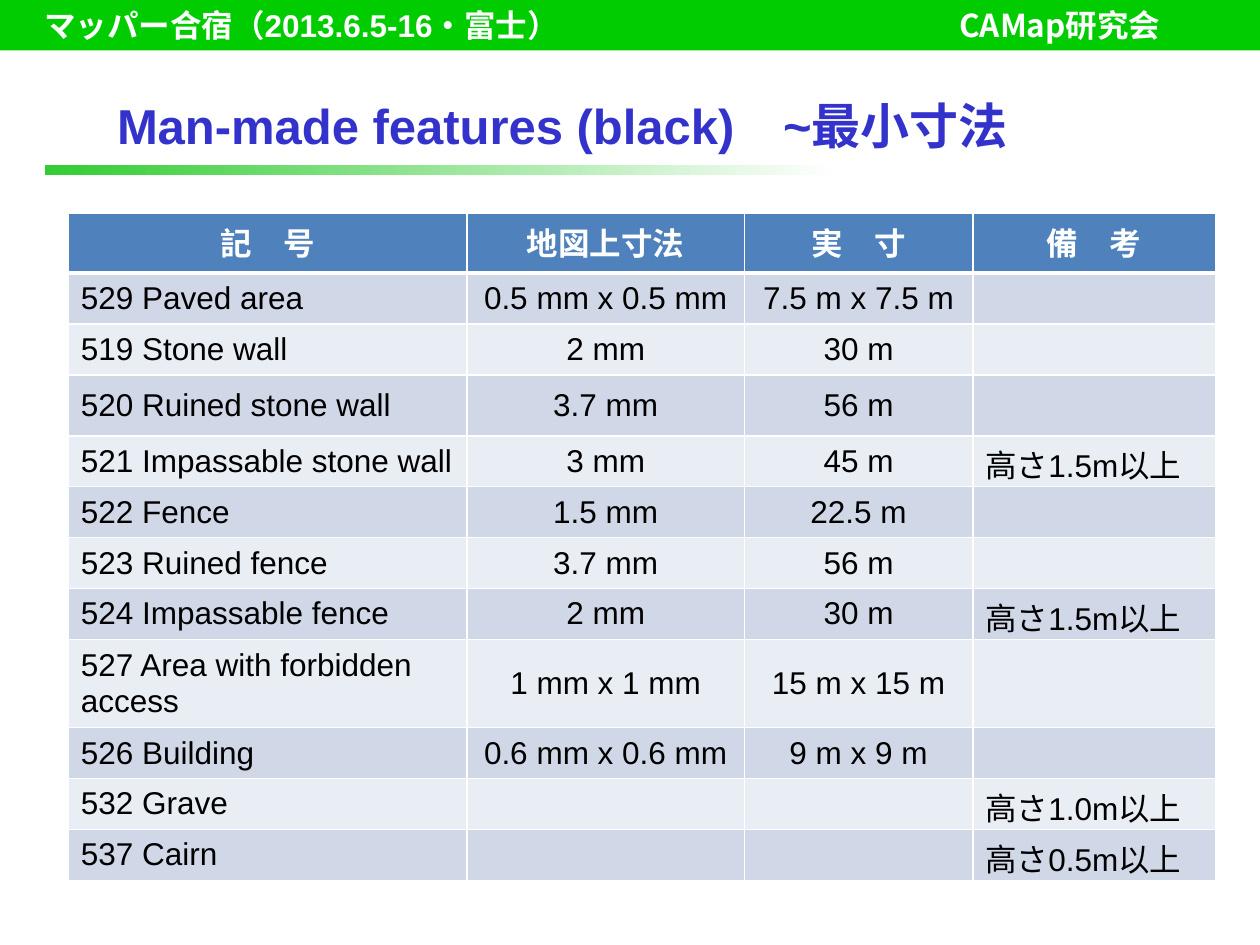
import lxml.etree
import pptx
import pptx.dml.color
import pptx.enum.shapes
import pptx.enum.text
import pptx.oxml.ns
import pptx.util

Pt = pptx.util.Pt
ALIGN = pptx.enum.text.PP_ALIGN
MIDDLE = pptx.enum.text.MSO_ANCHOR.MIDDLE
RECTANGLE = pptx.enum.shapes.MSO_SHAPE.RECTANGLE
CJK = "Noto Sans CJK JP"
qn = pptx.oxml.ns.qn


def color(value):
    return pptx.dml.color.RGBColor.from_string(value)


def add_span(para, text, shade, **formats):
    span = para.add_run()
    span.text = text
    for name, value in formats.items():
        setattr(span.font, name, value)
    span.font.color.rgb = color(shade)
    lxml.etree.SubElement(span.font._element, qn("a:ea"), typeface=CJK)


deck = pptx.Presentation()
deck.slide_width, deck.slide_height = Pt(720), Pt(540)
page = deck.slides.add_slide(deck.slide_layouts[6])

title_box = page.shapes.add_textbox(Pt(59.8), Pt(43.2), Pt(566.6), Pt(56.9))
title_frame = title_box.text_frame
title_frame.word_wrap = True
title_frame.vertical_anchor = MIDDLE
add_span(title_frame.paragraphs[0], "Man-made features (black)　~最小寸法", "3333CC",
         name="Arial", size=Pt(28), bold=True)

underline = page.shapes.add_shape(RECTANGLE, Pt(25.5), Pt(94.4), Pt(453.6), Pt(5.4))
underline.shadow.inherit = False
underline.line.fill.background()
underline.fill.gradient()
underline.fill.gradient_angle = 0
for stop, shade in zip(underline.fill.gradient_stops, ("33CC33", "FFFFFF")):
    stop.color.rgb = color(shade)

banner = page.shapes.add_shape(RECTANGLE, 0, 0, Pt(720), Pt(28.8))
banner.shadow.inherit = False
banner.line.fill.background()
banner.fill.solid()
banner.fill.fore_color.rgb = color("00CC00")
banner_format = {"margin_left": Pt(25.2), "margin_right": 0, "margin_top": 0,
                 "margin_bottom": 0, "vertical_anchor": MIDDLE, "word_wrap": True}
for name, value in banner_format.items():
    setattr(banner.text_frame, name, value)
banner_para = banner.text_frame.paragraphs[0]
banner_para.alignment = ALIGN.LEFT
tabs = lxml.etree.SubElement(banner_para._p.get_or_add_pPr(), qn("a:tabLst"))
lxml.etree.SubElement(tabs, qn("a:tab"), pos=str(Pt(523)), algn="l")
for text, font_name in (("マッパー合宿（", CJK), ("2013.6.5-16", "Arial"),
                        ("・富士）\tCAMap研究会", CJK)):
    add_span(banner_para, text, "FFFFFF", name=font_name, size=Pt(18), bold=True)

rows = [
    ("記　号", "地図上寸法", "実　寸", "備　考"),
    ("529 Paved area", "0.5 mm x 0.5 mm", "7.5 m x 7.5 m", ""),
    ("519 Stone wall", "2 mm", "30 m", ""),
    ("520 Ruined stone wall", "3.7 mm", "56 m", ""),
    ("521 Impassable stone wall", "3 mm", "45 m", "高さ1.5m以上"),
    ("522 Fence", "1.5 mm", "22.5 m", ""),
    ("523 Ruined fence", "3.7 mm", "56 m", ""),
    ("524 Impassable fence", "2 mm", "30 m", "高さ1.5m以上"),
    ("527 Area with forbidden access", "1 mm x 1 mm", "15 m x 15 m", ""),
    ("526 Building", "0.6 mm x 0.6 mm", "9 m x 9 m", ""),
    ("532 Grave", "", "", "高さ1.0m以上"),
    ("537 Cairn", "", "", "高さ0.5m以上"),
]
column_widths = (227.8, 158.6, 130.5, 138.6)
special_heights = {0: 34.3, 3: 34.9, 8: 49.7}
table = page.shapes.add_table(len(rows), len(column_widths), Pt(39), Pt(121.7),
                              Pt(sum(column_widths)), Pt(381)).table
for column, width in zip(table.columns, column_widths):
    column.width = Pt(width)

for row_index, texts in enumerate(rows):
    table.rows[row_index].height = Pt(special_heights.get(row_index, 29.1))
    header = row_index == 0
    fill = "4F81BD" if header else ("E9EDF4", "D0D8E8")[row_index % 2]
    for column_index, text in enumerate(texts):
        cell = table.cell(row_index, column_index)
        if not header:
            cell.vertical_anchor = MIDDLE
        if text and column_index == 3 and not header:
            cell.margin_top, cell.margin_bottom = Pt(3), 0
        para = cell.text_frame.paragraphs[0]
        para.alignment = ALIGN.CENTER if header or column_index in (1, 2) else ALIGN.LEFT
        if text:
            add_span(para, text, "FFFFFF" if header else "000000",
                     name="Calibri" if header else "Arial", size=Pt(18), bold=header)
        properties = cell._tc.get_or_add_tcPr()
        for side in "LRTB":
            thick = (row_index, side) in ((0, "B"), (1, "T"))
            border = lxml.etree.SubElement(properties, qn("a:ln" + side),
                                           w=str(Pt(3 if thick else 1)))
            solid = lxml.etree.SubElement(border, qn("a:solidFill"))
            lxml.etree.SubElement(solid, qn("a:srgbClr"), val="FFFFFF")
        cell.fill.solid()
        cell.fill.fore_color.rgb = color(fill)

deck.save("out.pptx")
